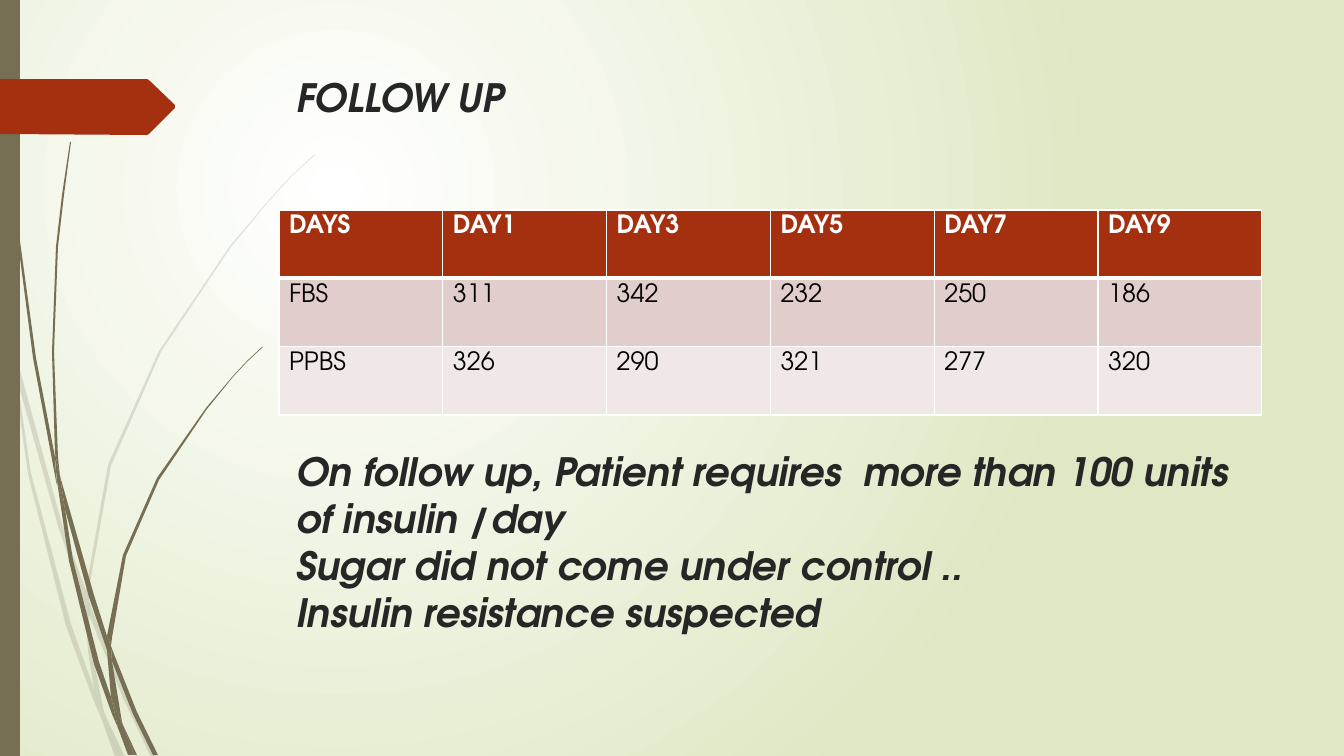
from dataclasses import dataclass

from lxml import etree
from pptx import Presentation
from pptx import util as u
from pptx.dml.color import RGBColor
from pptx.enum import shapes, text
from pptx.oxml.ns import qn

TITLE = "FOLLOW UP"
FINDINGS = [
    "On follow up, Patient requires  more than 100 units of insulin /day",
    "Sugar did not come under control ..",
    "Insulin resistance suspected",
]
SUGAR_TABLE = [
    ["DAYS", "DAY1", "DAY3", "DAY5", "DAY7", "DAY9"],
    ["FBS", "311", "342", "232", "250", "186"],
    ["PPBS", "326", "290", "321", "277", "320"],
]

# Outlines in px; each blade of grass is made of several adjoining pieces
FAINT_GRASS = [
    [(11, 353), (9, 325), (0, 284), (0, 301), (10, 347), (11, 351)],
    [(58, 526), (85, 604), (86, 591), (62, 524), (14, 348), (17, 379)],
    [(93, 612), (89, 601), (89, 615), (124, 700), (151, 757), (156, 757),
     (128, 698)],
    [(120, 757), (125, 757), (106, 717)],
    [(94, 689), (71, 624), (31, 473), (17, 379), (11, 353), (28, 474),
     (66, 626), (93, 699), (102, 720), (100, 713)],
    [(85, 604), (88, 651), (94, 689), (97, 698), (106, 717), (104, 712),
     (92, 651), (89, 615), (89, 613)],
    [(89, 589), (111, 466), (161, 352), (231, 247), (270, 200), (292, 176),
     (315, 155), (315, 154), (291, 176), (270, 199), (230, 246), (159, 351),
     (108, 465), (86, 589), (86, 591), (89, 601)],
    [(102, 720), (115, 757), (120, 757)],
    [(89, 613), (89, 615), (89, 601), (86, 591), (85, 604)],
    [(97, 698), (94, 689), (100, 713), (102, 720), (120, 757), (106, 717)],
]
DARK_GRASS = [
    [(7, 111), (17, 235), (33, 358), (56, 481), (57, 485), (55, 461),
     (55, 457), (36, 358), (19, 234), (8, 110), (5, 48), (4, 0), (3, 0),
     (4, 48)],
    [(89, 597), (107, 650), (107, 638), (107, 636), (94, 595), (60, 476),
     (65, 509)],
    [(114, 654), (111, 646), (112, 661), (133, 714), (153, 755), (158, 755),
     (137, 712)],
    [(111, 697), (99, 662), (73, 560), (65, 509), (57, 481), (69, 561),
     (94, 664), (112, 714), (118, 728), (117, 723)],
    [(60, 476), (58, 457), (54, 352), (58, 247), (64, 195), (71, 142),
     (70, 142), (62, 195), (56, 247), (52, 352), (55, 453)],
    [(134, 755), (137, 755), (123, 725)],
    [(57, 481), (65, 509), (60, 476), (55, 453), (55, 457)],
    [(112, 638), (126, 556), (159, 480), (207, 409), (233, 377), (247, 362),
     (263, 347), (262, 347), (247, 361), (233, 376), (206, 408), (157, 478),
     (123, 555), (107, 636), (111, 646)],
    [(118, 728), (128, 755), (132, 755)],
    [(107, 650), (111, 697), (117, 712), (123, 725), (122, 722), (112, 661),
     (110, 656)],
    [(107, 650), (110, 656), (112, 661), (111, 646), (107, 636), (107, 638)],
    [(117, 712), (111, 697), (117, 723), (118, 728), (131, 755), (134, 755),
     (123, 725)],
]
PENNANT = [(0, 79), (147, 79), (149, 80), (175, 105), (175, 108),
           (149, 134), (147, 135), (0, 134)]


@dataclass(frozen=True)
class Theme:
    font: str = "TeX Gyre Adventor"
    title_size: float = 27.9
    cell_size: float = 18
    ink: str = "262626"
    black: str = "000000"
    white: str = "FFFFFF"
    pale_green: str = "DFE8C4"
    olive: str = "766F54"
    rust: str = "A53010"
    bands: tuple = ("E1CDCC", "F0E8E7")


T = Theme()
W, H = 1344, 756
SCALE = 12192000 / W


def px(n):
    return u.Emu(round(n * SCALE))


def rgb(color):
    return RGBColor.from_string(color)


def write(p, words, size, color, bold=False, italic=False, before=0):
    p.alignment = text.PP_ALIGN.LEFT
    p.space_before = u.Pt(before)
    r = p.add_run()
    r.text = words
    f = r.font
    f.name, f.size, f.bold, f.italic = T.font, u.Pt(size), bold, italic
    f.color.rgb = rgb(color)


def paint(sp, color, opacity=100):
    sp.shadow.inherit = False
    sp.line.fill.background()
    sp.fill.solid()
    sp.fill.fore_color.rgb = rgb(color)
    if opacity < 100:
        clr = sp._element.spPr.find(".//" + qn("a:srgbClr"))
        etree.SubElement(clr, qn("a:alpha"), val=str(opacity * 1000))


def add_outline(s, points):
    start, *rest = points
    fb = s.shapes.build_freeform(*start, scale=SCALE)
    fb.add_line_segments(rest, close=True)
    return fb.convert_to_shape()


def add_background(s):
    fill = s.background.fill
    fill.gradient()
    for stop, color in zip(fill.gradient_stops, (T.white, T.pale_green)):
        stop.color.rgb = rgb(color)
    grad = s._element.find(".//" + qn("a:gradFill"))
    grad.remove(grad.find(qn("a:lin")))
    focus = etree.SubElement(grad, qn("a:path"), path="circle")
    etree.SubElement(focus, qn("a:fillToRect"),
                     l="50000", t="50000", r="100000", b="100000")


def border(cell, **widths):
    """Draw white cell borders, widths in points by side L, R, T, B."""
    tcPr = cell._tc.get_or_add_tcPr()
    for i, side in enumerate("LRTB"):
        ln = etree.Element(qn("a:ln" + side), w=str(u.Pt(widths.get(side, 1))))
        fill = etree.SubElement(ln, qn("a:solidFill"))
        etree.SubElement(fill, qn("a:srgbClr"), val=T.white)
        tcPr.insert(i, ln)


def add_sugar_table(s, left, top, width, height):
    rows, cols = len(SUGAR_TABLE), len(SUGAR_TABLE[0])
    table = s.shapes.add_table(rows, cols, px(left), px(top),
                               px(width), px(height)).table
    for col in table.columns:
        col.width = px(width / cols)
    for i, values in enumerate(SUGAR_TABLE):
        table.rows[i].height = px(height / rows)
        header = i == 0
        for j, value in enumerate(values):
            cell = table.cell(i, j)
            cell.fill.solid()
            cell.fill.fore_color.rgb = rgb(T.rust if header else T.bands[i - 1])
            border(cell, B=3 if header else 1, T=3 if i == 1 else 1)
            write(cell.text_frame.paragraphs[0], value, T.cell_size,
                  T.white if header else T.black, bold=header)


def fill_title(sp):
    sp.left, sp.top, sp.width, sp.height = px(286), px(68), px(983), px(602)
    tf = sp.text_frame
    tf.word_wrap = True
    tf.auto_size = text.MSO_AUTO_SIZE.NONE
    tf.vertical_anchor = text.MSO_ANCHOR.TOP
    for i, line in enumerate([TITLE, *FINDINGS]):
        p = tf.add_paragraph() if i else tf.paragraphs[0]
        write(p, line, T.title_size, T.ink, bold=True, italic=True,
              before=234 if i == 1 else 0)


def main():
    prs = Presentation()
    prs.slide_width, prs.slide_height = px(W), px(H)
    s = prs.slides.add_slide(prs.slide_layouts[5])
    add_background(s)
    for pieces, opacity in ((FAINT_GRASS, 20), (DARK_GRASS, 100)):
        for piece in pieces:
            paint(add_outline(s, piece), T.olive, opacity)
    edge_bar = s.shapes.add_shape(shapes.MSO_SHAPE.RECTANGLE, 0, 0, px(20), px(H))
    paint(edge_bar, T.olive)
    paint(add_outline(s, PENNANT), T.rust)
    fill_title(s.shapes.title)
    add_sugar_table(s, left=279, top=210, width=983, height=205)
    prs.save("out.pptx")


if __name__ == "__main__":
    main()
